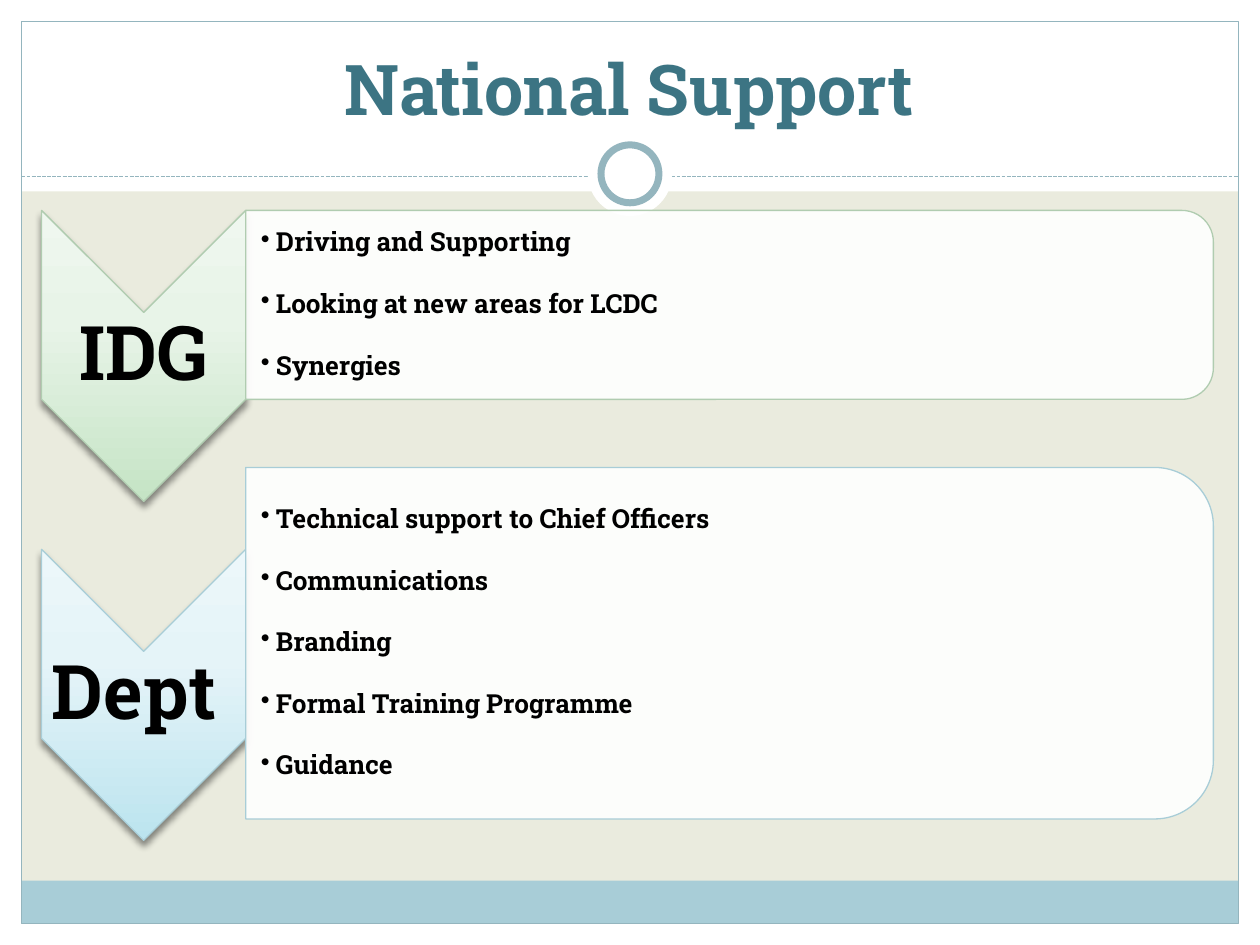
from dataclasses import dataclass

from lxml.etree import SubElement
from pptx import Presentation
from pptx.dml.color import RGBColor
from pptx.enum.dml import MSO_LINE
from pptx.enum.shapes import MSO_CONNECTOR, MSO_SHAPE
from pptx.enum.text import MSO_ANCHOR, PP_ALIGN
from pptx.oxml import parse_xml
from pptx.oxml.ns import nsdecls, qn
from pptx.util import Inches, Pt

FONT = "Roboto Slab"
WHITE = RGBColor(0xFF, 0xFF, 0xFF)
BLACK = RGBColor(0x00, 0x00, 0x00)
CREAM = RGBColor(0xEA, 0xEB, 0xDE)
SKY = RGBColor(0xA8, 0xCD, 0xD7)
SLATE = RGBColor(0x94, 0xB5, 0xBE)
TEAL = RGBColor(0x3C, 0x74, 0x83)
SAGE = RGBColor(0xB0, 0xCC, 0xB0)
GREEN_STOPS = ((0, "C5E4C5"), (62, "E8F4E8"), (100, "EFF7EF"))
BLUE_STOPS = ((0, "BCE4EF"), (62, "E5F4F8"), (100, "ECF7FA"))

# Page and column measures in inches
WIDTH, HEIGHT = 10, 7.5
MARGIN = 0.17
INNER = WIDTH - 2 * MARGIN
RULE_Y = 1.4
LABEL_LEFT, LABEL_WIDTH = 0.33, 1.62
PANEL_LEFT, PANEL_WIDTH = LABEL_LEFT + LABEL_WIDTH, 7.68
CHEVRON_HEIGHT = 2.31


@dataclass
class Box:
    left: float
    top: float
    width: float
    height: float

    def lengths(self):
        return [Inches(n) for n in (self.left, self.top, self.width, self.height)]

    def turned(self) -> "Box":
        """The box that covers this one after a quarter turn."""
        shift = (self.width - self.height) / 2
        return Box(self.left + shift, self.top - shift, self.height, self.width)


@dataclass
class Section:
    label: str
    bullets: list[str]
    chevron_top: float
    panel_top: float
    panel_height: float
    outline: RGBColor
    stops: tuple


SECTIONS = [
    Section("IDG", ["Driving and Supporting", "Looking at new areas for LCDC", "Synergies"],
            1.67, 1.67, 1.5, SAGE, GREEN_STOPS),
    Section("Dept ", ["Technical support to Chief Officers", "Communications", "Branding",
                      "Formal Training Programme", "Guidance"],
            4.36, 3.71, 2.79, SKY, BLUE_STOPS),
]


def add_shape(slide, kind, box: Box, fill=None, line=None, line_width=0.75, turned=False):
    shape = slide.shapes.add_shape(kind, *(box.turned() if turned else box).lengths())
    shape.rotation = 90 if turned else 0
    shape.shadow.inherit = False
    if fill is None:
        shape.fill.background()
    else:
        shape.fill.solid()
        shape.fill.fore_color.rgb = fill
    if line is None:
        shape.line.fill.background()
    else:
        shape.line.color.rgb = line
        shape.line.width = Pt(line_width)
    return shape


def format_font(font, size: float, color: RGBColor) -> None:
    font.name, font.size, font.bold = FONT, Pt(size), True
    font.color.rgb = color


def add_text(slide, box: Box, lines: list[str], size: float, insets, bulleted=False) -> None:
    frame = slide.shapes.add_textbox(*box.lengths()).text_frame
    frame.word_wrap = True
    frame.vertical_anchor = MSO_ANCHOR.MIDDLE
    frame.margin_left, frame.margin_top, frame.margin_right, frame.margin_bottom = (
        Inches(inset) for inset in insets)
    frame.text = "\n".join(lines)
    for index, paragraph in enumerate(frame.paragraphs):
        paragraph.line_spacing = 0.9
        if bulleted:
            properties = paragraph._p.get_or_add_pPr()
            properties.set("marL", str(Inches(0.12)))
            properties.set("indent", str(-Inches(0.12)))
            paragraph.space_before = Pt(19 if index else 0)
            SubElement(properties, qn("a:buChar")).set("char", "•")
        else:
            paragraph.alignment = PP_ALIGN.CENTER
        for run in paragraph.runs:
            format_font(run.font, size, BLACK)


def shade_chevron(shape, stops) -> None:
    """Gradient along the chevron, darkest at its tip, and a soft shadow below."""
    properties = shape.element.spPr
    marks = "".join(f'<a:gs pos="{share * 1000}"><a:srgbClr val="{color}"/></a:gs>'
                    for share, color in stops)
    gradient = parse_xml(f'<a:gradFill {nsdecls("a")} rotWithShape="1"><a:gsLst>{marks}</a:gsLst>'
                         '<a:lin ang="10800000" scaled="0"/></a:gradFill>')
    properties.replace(properties.find(qn("a:solidFill")), gradient)
    shadow = parse_xml(
        f'<a:outerShdw {nsdecls("a")} blurRad="{Pt(4)}" dist="{Pt(3)}" dir="5400000" '
        'rotWithShape="0"><a:srgbClr val="000000"><a:alpha val="43000"/></a:srgbClr></a:outerShdw>')
    properties.find(qn("a:effectLst")).append(shadow)


def add_backdrop(slide) -> None:
    slide.background.fill.solid()
    slide.background.fill.fore_color.rgb = CREAM
    # White margins and header
    for box in (Box(0, HEIGHT - MARGIN, WIDTH, MARGIN), Box(0, 0, WIDTH, 1.52),
                Box(0, 0, MARGIN, HEIGHT), Box(WIDTH - MARGIN, 0, MARGIN, HEIGHT)):
        add_shape(slide, MSO_SHAPE.RECTANGLE, box, WHITE)
    # Footer band and page frame
    add_shape(slide, MSO_SHAPE.RECTANGLE, Box(MARGIN, 6.99, INNER, 0.34), SKY)
    add_shape(slide, MSO_SHAPE.RECTANGLE,
              Box(MARGIN, MARGIN, INNER, HEIGHT - 2 * MARGIN), line=SLATE)
    # Dashed rule with a ring in the middle
    rule = slide.shapes.add_connector(MSO_CONNECTOR.STRAIGHT, Inches(MARGIN), Inches(RULE_Y),
                                      Inches(WIDTH - MARGIN), Inches(RULE_Y))
    rule.line.color.rgb = SLATE
    rule.line.width = Pt(0.75)
    rule.line.dash_style = MSO_LINE.SQUARE_DOT
    SubElement(rule.element.spPr, qn("a:effectLst"))
    for size, line in ((0.67, None), (0.46, SLATE)):
        add_shape(slide, MSO_SHAPE.OVAL,
                  Box((WIDTH - size) / 2, 1.38 - size / 2, size, size), WHITE, line, 4)


def add_title(slide, text: str) -> None:
    title = slide.shapes.title
    title.left, title.top, title.width, title.height = Box(0.33, 0.25, 9.33, 0.83).lengths()
    title.text_frame.text = text
    title.text_frame.vertical_anchor = MSO_ANCHOR.BOTTOM
    paragraph = title.text_frame.paragraphs[0]
    paragraph.alignment = PP_ALIGN.CENTER
    format_font(paragraph.runs[0].font, 40, TEAL)
    # Bring the title in front of the header
    slide.shapes.element.append(title.element)


def add_section(slide, section: Section) -> None:
    # Chevron and its label
    chevron = add_shape(slide, MSO_SHAPE.CHEVRON,
                        Box(LABEL_LEFT, section.chevron_top, LABEL_WIDTH, CHEVRON_HEIGHT),
                        WHITE, section.outline, turned=True)
    shade_chevron(chevron, section.stops)
    label_box = Box(LABEL_LEFT, section.chevron_top + LABEL_WIDTH / 2, LABEL_WIDTH,
                    CHEVRON_HEIGHT - LABEL_WIDTH)
    add_text(slide, label_box, [section.label], 43, [0.03] * 4)
    # Panel and its bullets
    panel_box = Box(PANEL_LEFT, section.panel_top, PANEL_WIDTH, section.panel_height)
    panel = add_shape(slide, MSO_SHAPE.ROUND_2_SAME_RECTANGLE, panel_box,
                      WHITE, section.outline, turned=True)
    color = panel.element.spPr.find(qn("a:solidFill"))[0]
    SubElement(color, qn("a:alpha")).set("val", "90000")
    inset = section.panel_height * 0.05
    text_box = Box(PANEL_LEFT, section.panel_top + inset, PANEL_WIDTH - inset,
                   section.panel_height - 2 * inset)
    add_text(slide, text_box, section.bullets, 15, (0.12, 0.01, 0.01, 0.01), bulleted=True)


def main() -> None:
    presentation = Presentation()
    presentation.slide_width, presentation.slide_height = Inches(WIDTH), Inches(HEIGHT)
    slide = presentation.slides.add_slide(presentation.slide_layouts[5])
    add_backdrop(slide)
    add_title(slide, "National Support")
    for section in SECTIONS:
        add_section(slide, section)
    presentation.save("out.pptx")


if __name__ == "__main__":
    main()
